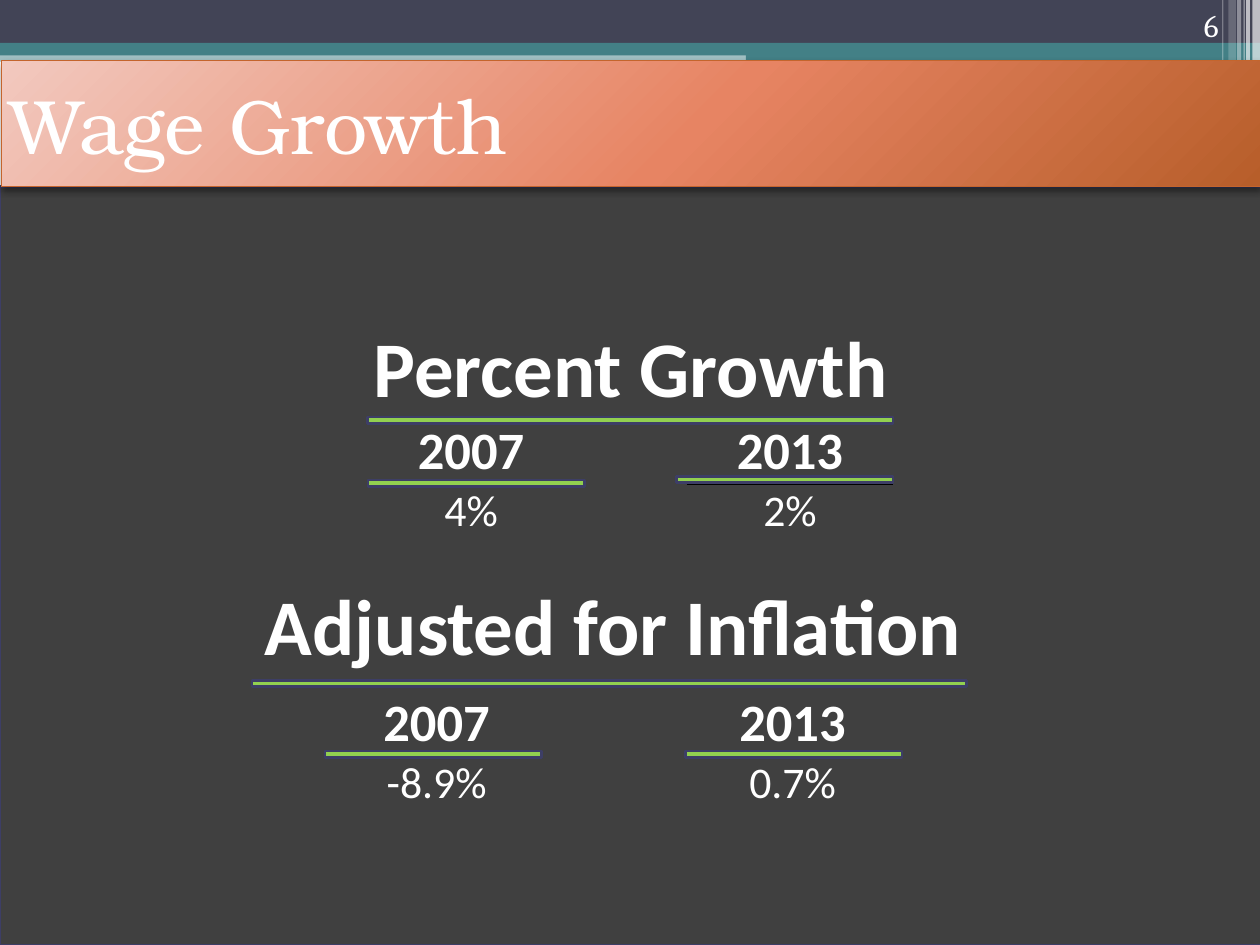
import pptx
import pptx.util
import pptx.dml.color
import pptx.enum.shapes
import pptx.enum.text
import pptx.oxml
import pptx.oxml.ns

Pt = pptx.util.Pt
RGB = pptx.dml.color.RGBColor.from_string
ALIGN = pptx.enum.text.PP_ALIGN
ANCHOR = pptx.enum.text.MSO_ANCHOR
NS = pptx.oxml.ns.nsdecls("a")
PLAIN = "{2D5ABB26-0587-4C30-8999-92F81FD0307C}"

HUES = {
    "white": "FFFFFF", "black": "000000", "navy": "424456", "teal": "438086",
    "dark": "404040", "edge": "3D3E66", "green": "92D050", "rust": "C4652D",
    "pale": "F2C9BF", "coral": "E78463", "brown": "B75E2A",
}


def text(frame, words, size=25, font="Calibri", bold=False, align=ALIGN.CENTER):
    para = frame.paragraphs[0]
    para.alignment = align
    run = para.add_run()
    run.text = words
    run.font.size = Pt(size)
    run.font.name = font
    run.font.bold = bold
    run.font.color.rgb = RGB(HUES["white"])


def box(slide, x, y, w, h, hue, line=None, alpha=None):
    kind = pptx.enum.shapes.MSO_SHAPE.RECTANGLE
    shape = slide.shapes.add_shape(kind, Pt(x), Pt(y), Pt(w), Pt(h))
    shape.shadow.inherit = False
    shape.fill.solid()
    shape.fill.fore_color.rgb = RGB(HUES[hue])
    if alpha:
        clr = shape._element.spPr.find(".//" + pptx.oxml.ns.qn("a:srgbClr"))
        clr.append(pptx.oxml.parse_xml(f'<a:alpha {NS} val="{alpha * 1000}"/>'))
    if line:
        shape.line.color.rgb = RGB(HUES[line])
        shape.line.width = Pt(1.5)
    else:
        shape.line.fill.background()


def header(slide):
    box(slide, 0, 28.8, 720, 6.5, "teal", alpha=50)
    box(slide, 0, 0, 720, 24.5, "navy")
    box(slide, 0, 24.5, 720, 7.2, "teal")
    box(slide, 426.2, 28.1, 293.8, 7.2, "teal")
    stripes = [
        (715.7, 4.3, 49, 65), (712.1, 2.2, 49, 65), (710.6, 0.7, 49, 60),
        (707, 2.2, 49, 40), (702, 4.3, 46, 20), (698.4, 0.7, 46, 30),
    ]
    for x, w, h, alpha in stripes:
        box(slide, x, 0, w, h, "white", alpha=alpha)


def number(slide, words):
    note = slide.shapes.add_textbox(Pt(643.7), Pt(0), Pt(59.8), Pt(28.8))
    note.text_frame.word_wrap = True
    note.text_frame.vertical_anchor = ANCHOR.BOTTOM
    text(note.text_frame, words, size=18, font="Cambria", align=ALIGN.RIGHT)


def title(slide, words):
    shape = slide.shapes.title
    slide.shapes._spTree.append(shape._element)
    shape.left, shape.top, shape.width, shape.height = Pt(0.7), Pt(34.6), Pt(720), Pt(72)
    stops = "".join(
        f'<a:gs pos="{pos * 1000}"><a:srgbClr val="{HUES[hue]}"/></a:gs>'
        for pos, hue in [(0, "pale"), (55, "coral"), (100, "brown")])
    props = shape._element.spPr
    props.append(pptx.oxml.parse_xml(
        f'<a:gradFill {NS} rotWithShape="1"><a:gsLst>{stops}</a:gsLst>'
        '<a:path path="circle"><a:fillToRect l="-40000" t="-90000" r="140000" b="190000"/>'
        '</a:path></a:gradFill>'))
    shape.line.color.rgb = RGB(HUES["rust"])
    shape.line.width = Pt(0.75)
    props.append(pptx.oxml.parse_xml(
        f'<a:effectLst {NS}><a:outerShdw blurRad="{Pt(4)}" dist="{Pt(2)}" dir="5400000" '
        f'rotWithShape="0"><a:srgbClr val="{HUES["black"]}"><a:alpha val="45000"/>'
        '</a:srgbClr></a:outerShdw></a:effectLst>'))
    frame = shape.text_frame
    frame.auto_size = pptx.enum.text.MSO_AUTO_SIZE.NONE
    frame.vertical_anchor = ANCHOR.MIDDLE
    frame.margin_left = Pt(5)
    text(frame, words, size=44, font="TeX Gyre Bonum", align=ALIGN.LEFT)


def border(cell, sides):
    props = cell._tc.get_or_add_tcPr()
    for spot, side in enumerate(sides):
        props.insert(spot, pptx.oxml.parse_xml(
            f'<a:ln{side} {NS} w="{Pt(0.5)}"><a:solidFill>'
            f'<a:srgbClr val="{HUES["black"]}"/></a:solidFill></a:ln{side}>'))


def grid(slide, x, y, cols, rows, data, ruled=False):
    shape = slide.shapes.add_table(
        len(rows), len(cols), Pt(x), Pt(y), Pt(sum(cols)), Pt(sum(rows)))
    table = shape.table
    table.first_row = table.horz_banding = False
    shape._element.find(".//" + pptx.oxml.ns.qn("a:tableStyleId")).text = PLAIN
    for col, width in zip(table.columns, cols):
        col.width = Pt(width)
    for row, height in zip(table.rows, rows):
        row.height = Pt(height)
    table.cell(0, 0).merge(table.cell(0, len(cols) - 1))
    for r, (line, size, sides) in enumerate(zip(data, (45, 30, 25), ("B", "TB", "T"))):
        for c, words in enumerate(line):
            cell = table.cell(r, c)
            cell.fill.background()
            cell.vertical_anchor = ANCHOR.BOTTOM
            cell.margin_left = cell.margin_right = cell.margin_top = Pt(0.7)
            cell.margin_bottom = 0
            if words:
                text(cell.text_frame, words, size=size, bold=r < 2)
            if ruled and (r == 0 or words):
                border(cell, sides)


def bar(slide, x, y, w=123.8):
    box(slide, x, y, w, 3.6, "green", line="edge")


def main():
    deck = pptx.Presentation()
    deck.slide_width, deck.slide_height = Pt(720), Pt(540)
    slide = deck.slides.add_slide(deck.slide_layouts[5])
    header(slide)
    box(slide, 0, 106.6, 720.7, 433.4, "dark", line="edge")
    number(slide, "6")
    title(slide, "Wage Growth")
    grid(slide, 210.2, 183.6, (118.1, 64.1, 118.1), (52.6, 25.9, 20.9),
         [("Percent Growth", "", ""), ("2007", "", "2013"), ("4%", "", "2%")], ruled=True)
    grid(slide, 149.8, 311, (199.4, 5.8, 195.8), (75.6, 45.4, 28.8),
         [("Adjusted for Inflation", "", ""), ("2007", "", "2013"), ("-8.9%", "", "0.7%")])
    bar(slide, 210.2, 238.3, w=300.2)
    bar(slide, 144, 388.8, w=408.2)
    for x, y in [(210.2, 274.3), (386.6, 272.2), (391.7, 429.1), (185.8, 429.1)]:
        bar(slide, x, y)
    deck.save("out.pptx")


if __name__ == "__main__":
    main()
